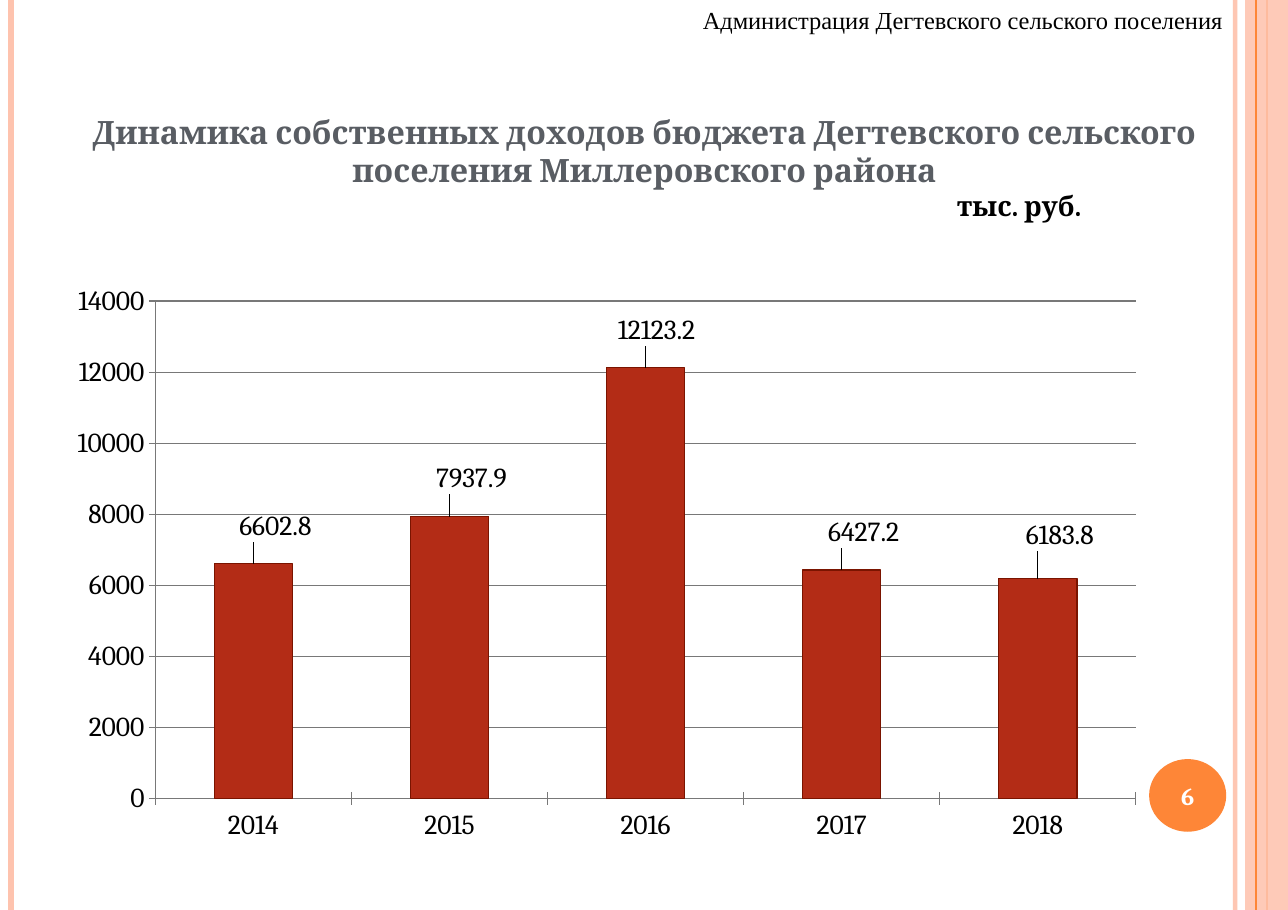
from lxml import etree
from pptx import Presentation
from pptx.chart.data import CategoryChartData
from pptx.dml.color import RGBColor
from pptx.enum.chart import XL_CHART_TYPE, XL_LABEL_POSITION, XL_TICK_MARK
from pptx.enum.shapes import MSO_CONNECTOR, MSO_SHAPE
from pptx.enum.text import MSO_ANCHOR, PP_ALIGN
from pptx.oxml.ns import qn
from pptx.util import Pt

COLUMNS = XL_CHART_TYPE.COLUMN_CLUSTERED
OUTSIDE_END = XL_LABEL_POSITION.OUTSIDE_END
CROSS = XL_TICK_MARK.CROSS
STRAIGHT = MSO_CONNECTOR.STRAIGHT
MIDDLE = MSO_ANCHOR.MIDDLE
LEFT, CENTER = PP_ALIGN.LEFT, PP_ALIGN.CENTER

PAGE_WIDTH, PAGE_HEIGHT = 841.68, 594.72
COLORS = {
    "peach": "FEC3AE", "orange": "FE8637", "bar": "B32C16", "bar edge": "7A1400",
    "title": "595D63", "text": "000000", "light": "FFFFFF", "axis": "787878",
}
HEADER = "Администрация Дегтевского сельского поселения"
TITLE = "Динамика собственных доходов бюджета Дегтевского сельского поселения Миллеровского района"
UNIT = "тыс. руб."
UNIT_INDENT = 575
PAGE_NUMBER = "6"

# year, income, label shift right and down as shares of the chart
INCOME = [
    ("2014", 6602.8, 0.02, -0.03),
    ("2015", 7937.9, 0.02, -0.03),
    ("2016", 12123.2, 0.01, -0.03),
    ("2017", 6427.2, 0.02, -0.03),
    ("2018", 6183.8, 0.02, -0.04),
]
PLOT_AREA = {"x": 0.09, "y": 0.05, "w": 0.89, "h": 0.86}

# x, colour, width, opacity in percent
RULES_BEHIND = [(807.12, "peach", 3, 93), (7.2, "peach", 4.5, 100), (828, "orange", 1.5, 100)]
RULES_FRONT = [(820.8, "orange", 0.75, 100)]


def rgb(name):
    return RGBColor.from_string(COLORS[name])


def set_opacity(shape, percent):
    for color in shape._element.spPr.iter(qn("a:srgbClr")):
        etree.SubElement(color, qn("a:alpha"), val=str(percent * 1000))


def add_rules(page, rules):
    for x, color, width, opacity in rules:
        rule = page.shapes.add_connector(STRAIGHT, Pt(x), 0, Pt(x), Pt(PAGE_HEIGHT))
        rule.line.color.rgb = rgb(color)
        rule.line.width = Pt(width)
        if opacity < 100:
            set_opacity(rule, opacity)
        etree.SubElement(rule._element.spPr, qn("a:effectLst"))


def add_plain_shape(page, kind, color, left, top, width, height):
    shape = page.shapes.add_shape(kind, Pt(left), Pt(top), Pt(width), Pt(height))
    shape.shadow.inherit = False
    shape.fill.solid()
    shape.fill.fore_color.rgb = rgb(color)
    shape.line.fill.background()
    return shape


def style(para, size, color, font="Cambria", bold=False, align=LEFT):
    para.alignment = align
    for span in para.runs:
        span.font.name = font
        span.font.size = Pt(size)
        span.font.bold = bold
        span.font.color.rgb = rgb(color)


def add_text(page, text, left, top, width, height):
    box = page.shapes.add_textbox(Pt(left), Pt(top), Pt(width), Pt(height))
    box.text_frame.word_wrap = True
    box.text_frame.text = text
    return box.text_frame.paragraphs


def add_layout(parent, position, values, target=None):
    """Put a manual layout into a chart part, at the given child index."""
    layout = parent.find(qn("c:layout"))
    if layout is None:
        layout = etree.Element(qn("c:layout"))
        parent.insert(position, layout)
    manual = etree.SubElement(layout, qn("c:manualLayout"))
    if target:
        etree.SubElement(manual, qn("c:layoutTarget"), val=target)
        for side in "xy":
            etree.SubElement(manual, qn(f"c:{side}Mode"), val="edge")
    for key, value in values.items():
        etree.SubElement(manual, qn(f"c:{key}"), val=str(value))


def add_income_chart(page):
    data = CategoryChartData()
    data.categories = [year for year, *_ in INCOME]
    data.add_series("Series 1", [income for _, income, *_ in INCOME])
    frame = page.shapes.add_chart(COLUMNS, Pt(36.72), Pt(177.84), Pt(720), Pt(378), data)
    chart = frame.chart
    chart.has_legend = chart.has_title = False
    chart.font.name = "Cambria"
    chart.font.size = Pt(18)
    chart.font.color.rgb = rgb("text")

    values = chart.value_axis
    values.minimum_scale, values.maximum_scale, values.major_unit = 0, 14000, 2000
    values.has_major_gridlines = True
    values.tick_labels.number_format = "General"
    values.tick_labels.number_format_is_linked = False
    for axis in (values, chart.category_axis):
        axis.major_tick_mark = CROSS
    for part in (values, chart.category_axis, values.major_gridlines):
        part.format.line.color.rgb = rgb("axis")
        part.format.line.width = Pt(0.75)

    plot = chart.plots[0]
    plot.gap_width = 150
    plot.vary_by_categories = False
    series = plot.series[0]
    series.format.fill.solid()
    series.format.fill.fore_color.rgb = rgb("bar")
    series.format.line.color.rgb = rgb("bar edge")
    series.format.line.width = Pt(0.75)
    series.data_labels.show_value = True
    series.data_labels.position = OUTSIDE_END
    for index in range(len(INCOME)):
        series.points[index].data_label.position = OUTSIDE_END
    labels = chart.element.iter(qn("c:dLbl"))
    for label, (_, _, right, down) in zip(labels, INCOME):
        add_layout(label, 1, {"x": right, "y": down})
    add_layout(next(chart.element.iter(qn("c:plotArea"))), 0, PLOT_AREA, "inner")


def main():
    deck = Presentation()
    deck.slide_width, deck.slide_height = Pt(PAGE_WIDTH), Pt(PAGE_HEIGHT)
    page = deck.slides.add_slide(deck.slide_layouts[6])

    add_rules(page, RULES_BEHIND)
    band = add_plain_shape(page, MSO_SHAPE.RECTANGLE, "peach", 813.6, 0, 28.08, PAGE_HEIGHT)
    set_opacity(band, 87)
    add_rules(page, RULES_FRONT)

    badge = add_plain_shape(page, MSO_SHAPE.OVAL, "orange", 750.96, 496.08, 50.4, 47.52)
    badge.text_frame.text = PAGE_NUMBER
    badge.text_frame.vertical_anchor = MIDDLE
    style(badge.text_frame.paragraphs[0], 16, "light", bold=True, align=CENTER)

    add_income_chart(page)

    title, unit = add_text(page, f"{TITLE}\n{UNIT}", 43.2, 69.84, 756, 83.52)
    style(title, 21, "title", bold=True, align=CENTER)
    style(unit, 18, "text", bold=True)
    unit._p.get_or_add_pPr().set("marL", str(Pt(UNIT_INDENT)))

    header = add_text(page, HEADER, 452.16, 0, 390.24, 26.64)[0]
    style(header, 16, "text", font="Times New Roman")
    deck.save("out.pptx")


if __name__ == "__main__":
    main()
